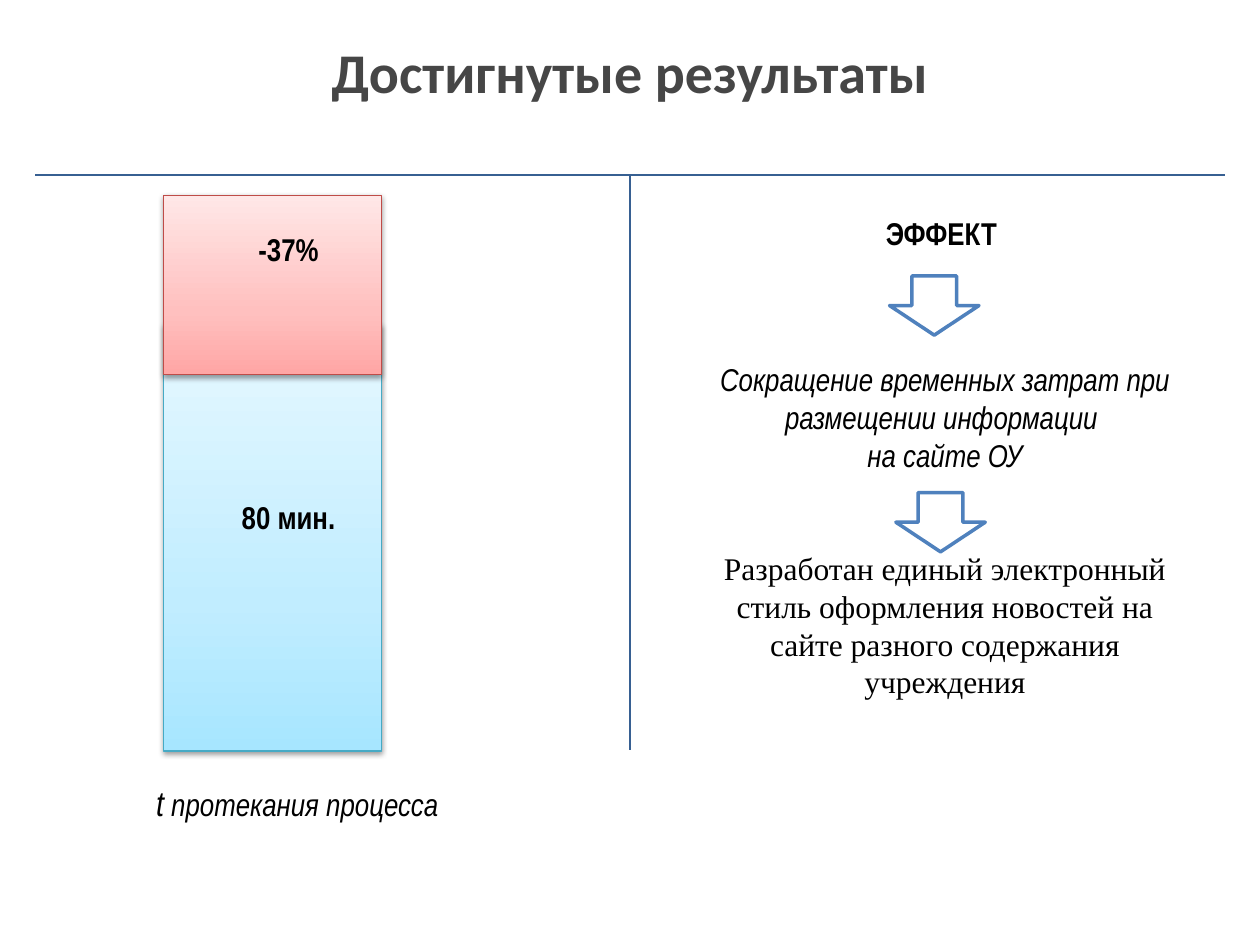
from copy import deepcopy

from pptx import Presentation, util as u
from pptx.dml.color import RGBColor
from pptx.enum import shapes, text
from pptx.oxml import parse_xml
from pptx.oxml.ns import nsdecls, qn

BLACK = RGBColor(0x00, 0x00, 0x00)
WHITE = RGBColor(0xFF, 0xFF, 0xFF)
TITLE_GREY = RGBColor(0x46, 0x46, 0x46)
RULE_BLUE = RGBColor(0x37, 0x60, 0x92)
ARROW_BLUE = RGBColor(0x4F, 0x81, 0xBD)
CYAN_LINE = RGBColor(0x46, 0xAA, 0xC5)
RED_LINE = RGBColor(0xBF, 0x4C, 0x48)
CYANS = [RGBColor(0xA7, 0xE6, 0xFF), RGBColor(0xC1, 0xED, 0xFF), RGBColor(0xE7, 0xF8, 0xFF)]
REDS = [RGBColor(0xFF, 0xA6, 0xA5), RGBColor(0xFF, 0xC0, 0xBF), RGBColor(0xFF, 0xE7, 0xE7)]
STOPS = [0, 0.35, 1]

# Run formats
BASE = {"name": "Arial Narrow", "size": u.Pt(18), "color": BLACK}
BOLD = BASE | {"bold": True}
ITALIC = BASE | {"italic": True}
LARGE_ITALIC = ITALIC | {"size": u.Pt(20)}
SERIF = BASE | {"name": "Times New Roman"}
TITLE = {"name": "Calibri", "size": u.Pt(32), "color": TITLE_GREY, "bold": True}

# Bars: top, height, gradient colours, outline
BAR_LEFT, BAR_WIDTH = 1.3, 1.73
BARS = [(2.57, 3.39, CYANS, CYAN_LINE), (1.55, 1.42, REDS, RED_LINE)]

# Rules: begin x, begin y, end x, end y
RULES = [(0.28, 1.39, 9.72, 1.39), (5, 1.39, 5, 5.95)]

ARROWS = [(7.06, 2.19), (7.11, 3.91)]
ARROW_SIZE = (0.71, 0.47)

# Texts: box, anchor, paragraphs as (space before in points, runs)
TOP, MIDDLE = text.MSO_ANCHOR.TOP, text.MSO_ANCHOR.MIDDLE
TEXTS = [
    ((0.12, 0.21, 9.76, 0.71), MIDDLE, [(0, [("Достигнутые результаты", TITLE)])]),
    ((5.53, 1.65, 3.94, 4.31), TOP, [
        (0, [("ЭФФЕКТ ", BOLD)]),
        (62, [("Сокращение временных затрат при размещении информации ", ITALIC)]),
        (0, [("на сайте ОУ", ITALIC)]),
        (43, [("Разработан единый электронный стиль оформления новостей "
               "на сайте разного содержания учреждения", SERIF)]),
    ]),
    ((1.54, 1.78, 1.5, 0.4), TOP, [(0, [("-37%", BOLD)])]),
    ((1.54, 3.9, 1.5, 0.4), TOP, [(0, [("80 мин.", BOLD)])]),
    ((1.06, 6.15, 2.6, 0.44), TOP, [
        (0, [("t", LARGE_ITALIC), (" протекания процесса", ITALIC)]),
    ]),
]


def inches(values):
    return [u.Inches(value) for value in values]


def add_outlined(slide, kind, box, color, width):
    shape = slide.shapes.add_shape(kind, *inches(box))
    shape.shadow.inherit = False
    shape.line.color.rgb = color
    shape.line.width = u.Pt(width)
    return shape


def add_bar(slide, top, height, colors, outline):
    box = (BAR_LEFT, top, BAR_WIDTH, height)
    bar = add_outlined(slide, shapes.MSO_SHAPE.RECTANGLE, box, outline, 0.75)
    bar.fill.gradient()
    bar.fill.gradient_angle = 90
    properties = bar._element.spPr
    stop_list = properties.find(qn("a:gradFill")).find(qn("a:gsLst"))
    stop_list.append(deepcopy(stop_list[0]))
    for stop, position, color in zip(bar.fill.gradient_stops, STOPS, colors):
        stop.position = position
        stop.color.rgb = color
    # Soft shadow straight below
    properties.find(qn("a:effectLst")).append(parse_xml(
        f'<a:outerShdw {nsdecls("a")} blurRad="40000" dist="20000" dir="5400000" '
        'rotWithShape="0"><a:srgbClr val="000000"><a:alpha val="38000"/>'
        '</a:srgbClr></a:outerShdw>'))


def add_rule(slide, ends):
    rule = slide.shapes.add_connector(shapes.MSO_CONNECTOR.STRAIGHT, *inches(ends))
    rule.line.color.rgb = RULE_BLUE
    rule.line.width = u.Pt(1.5)
    rule._element.spPr.append(parse_xml(f'<a:effectLst {nsdecls("a")}/>'))


def add_text(slide, box, anchor, paragraphs):
    frame = slide.shapes.add_textbox(*inches(box)).text_frame
    frame.word_wrap = True
    frame.vertical_anchor = anchor
    for index, (space, runs) in enumerate(paragraphs):
        paragraph = frame.add_paragraph() if index else frame.paragraphs[0]
        paragraph.alignment = text.PP_ALIGN.CENTER
        paragraph.space_before = u.Pt(space)
        for words, style in runs:
            run = paragraph.add_run()
            run.text = words
            for name, value in style.items():
                if name == "color":
                    run.font.color.rgb = value
                else:
                    setattr(run.font, name, value)


def main():
    presentation = Presentation()
    presentation.slide_width, presentation.slide_height = inches((10, 7.5))
    slide = presentation.slides.add_slide(presentation.slide_layouts[6])
    for bar in BARS:
        add_bar(slide, *bar)
    for ends in RULES:
        add_rule(slide, ends)
    for corner in ARROWS:
        arrow = add_outlined(slide, shapes.MSO_SHAPE.DOWN_ARROW,
                             corner + ARROW_SIZE, ARROW_BLUE, 2)
        arrow.fill.solid()
        arrow.fill.fore_color.rgb = WHITE
    for item in TEXTS:
        add_text(slide, *item)
    presentation.save("out.pptx")


if __name__ == "__main__":
    main()
